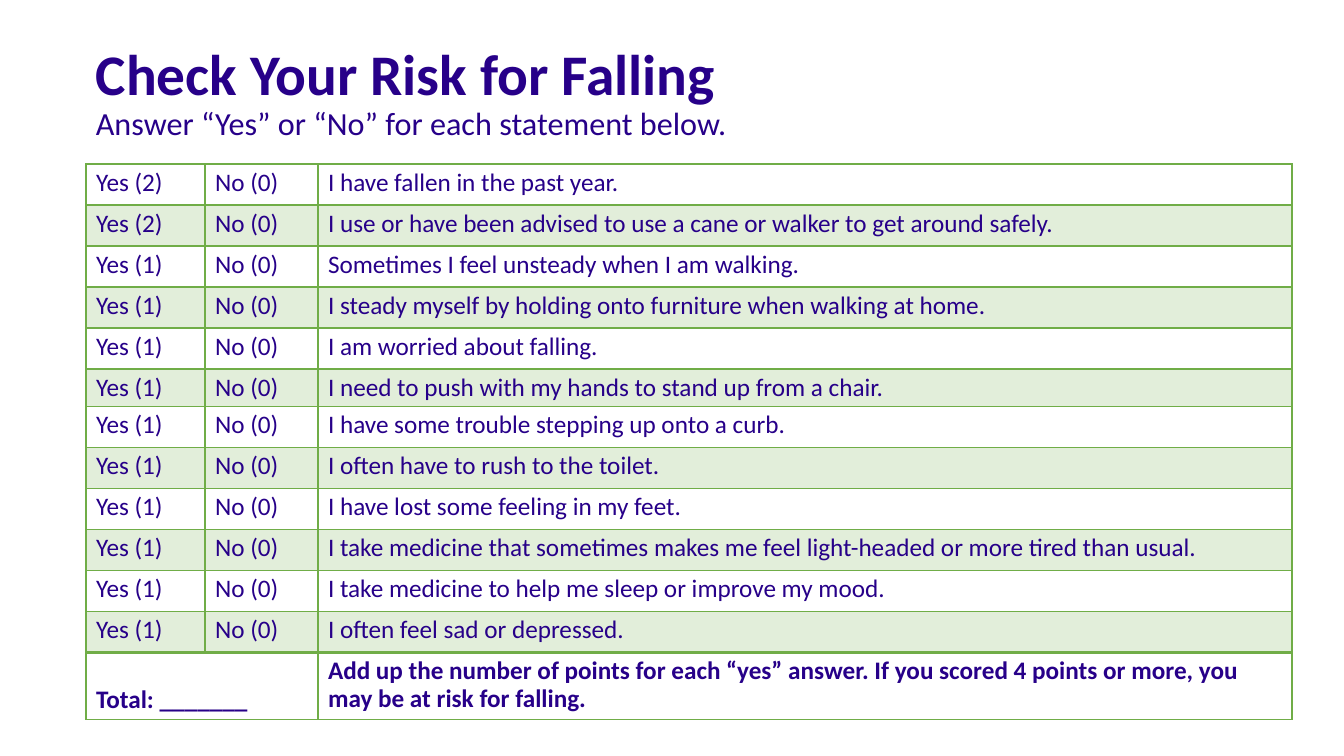
from lxml.etree import SubElement
from pptx import Presentation
from pptx.dml.color import RGBColor
from pptx.enum.text import MSO_ANCHOR
from pptx.oxml.ns import qn
from pptx.util import Emu, Pt

PURPLE = "270089"
GREEN = "70AD47"
COLUMN_WIDTHS = [119, 113, 974]
ROW_HEIGHT = 41
SHORT_ROW = 5
SHORT_ROW_HEIGHT = 37
TOTAL_HEIGHT = 67
STATEMENTS = [
    (2, "I have fallen in the past year."),
    (2, "I use or have been advised to use a cane or walker to get around safely."),
    (1, "Sometimes I feel unsteady when I am walking."),
    (1, "I steady myself by holding onto furniture when walking at home."),
    (1, "I am worried about falling."),
    (1, "I need to push with my hands to stand up from a chair."),
    (1, "I have some trouble stepping up onto a curb."),
    (1, "I often have to rush to the toilet."),
    (1, "I have lost some feeling in my feet."),
    (1, "I take medicine that sometimes makes me feel light-headed or more tired than usual."),
    (1, "I take medicine to help me sleep or improve my mood."),
    (1, "I often feel sad or depressed."),
]
TOTAL_NOTE = (
    "Add up the number of points for each “yes” answer. "
    "If you scored 4 points or more, you may be at risk for falling."
)


def px(length):
    return Emu(round(length * 914400 / 100.8))


def color(code):
    return RGBColor.from_string(code)


def write(para, text, size=18, bold=False):
    para.line_spacing = 0.9
    span = para.add_run()
    span.text = text
    span.font.name = "Calibri"
    span.font.size = Pt(size)
    span.font.bold = bold
    span.font.color.rgb = color(PURPLE)


def add_borders(cell, top=1, bottom=1):
    properties = cell._tc.get_or_add_tcPr()
    for side, width in (("L", 1), ("R", 1), ("T", top), ("B", bottom)):
        line = SubElement(properties, qn(f"a:ln{side}"), w=str(Pt(width)))
        fill = SubElement(line, qn("a:solidFill"))
        SubElement(fill, qn("a:srgbClr"), val=GREEN)


def shade(cell, shaded):
    if not shaded:
        cell.fill.background()
        return
    cell.fill.solid()
    cell.fill.fore_color.rgb = color(GREEN)
    tint = cell._tc.tcPr.find(f"{qn('a:solidFill')}/{qn('a:srgbClr')}")
    SubElement(tint, qn("a:alpha"), val="20000")


def add_heading(page, left, top, width, height):
    box = page.shapes.add_textbox(px(left), px(top), px(width), px(height))
    frame = box.text_frame
    frame.word_wrap = True
    frame.vertical_anchor = MSO_ANCHOR.MIDDLE
    write(frame.paragraphs[0], "Check Your Risk for Falling", size=41, bold=True)
    write(frame.add_paragraph(), "Answer “Yes” or “No” for each statement below.", size=23)


def add_checklist(page, left, top, width, height):
    rows = [(f"Yes ({points})", "No (0)", text) for points, text in STATEMENTS]
    rows.append(("Total: _______", "", TOTAL_NOTE))
    total = len(rows) - 1
    table = page.shapes.add_table(
        len(rows), len(COLUMN_WIDTHS), px(left), px(top), px(width), px(height)
    ).table
    table.first_row = False
    table.horz_banding = False
    for column, column_width in zip(table.columns, COLUMN_WIDTHS):
        column.width = px(column_width)
    for row in table.rows:
        row.height = px(ROW_HEIGHT)
    table.rows[SHORT_ROW].height = px(SHORT_ROW_HEIGHT)
    table.rows[total].height = px(TOTAL_HEIGHT)
    for index, texts in enumerate(rows):
        for cell, text in zip(table.rows[index].cells, texts):
            add_borders(
                cell,
                top=2 if index in (1, total) else 1,
                bottom=2 if index in (0, total - 1) else 1,
            )
            shade(cell, index % 2 == 1)
            if text:
                write(cell.text_frame.paragraphs[0], text, bold=index == total)
    total_cell = table.cell(total, 0)
    total_cell.merge(table.cell(total, 1))
    total_cell.vertical_anchor = MSO_ANCHOR.BOTTOM


def main():
    deck = Presentation()
    deck.slide_width = px(1344)
    deck.slide_height = px(756)
    page = deck.slides.add_slide(deck.slide_layouts[6])
    add_heading(page, 86, 40, 1165, 109)
    add_checklist(page, 86, 164, 1206, 555)
    deck.save("out.pptx")


if __name__ == "__main__":
    main()
